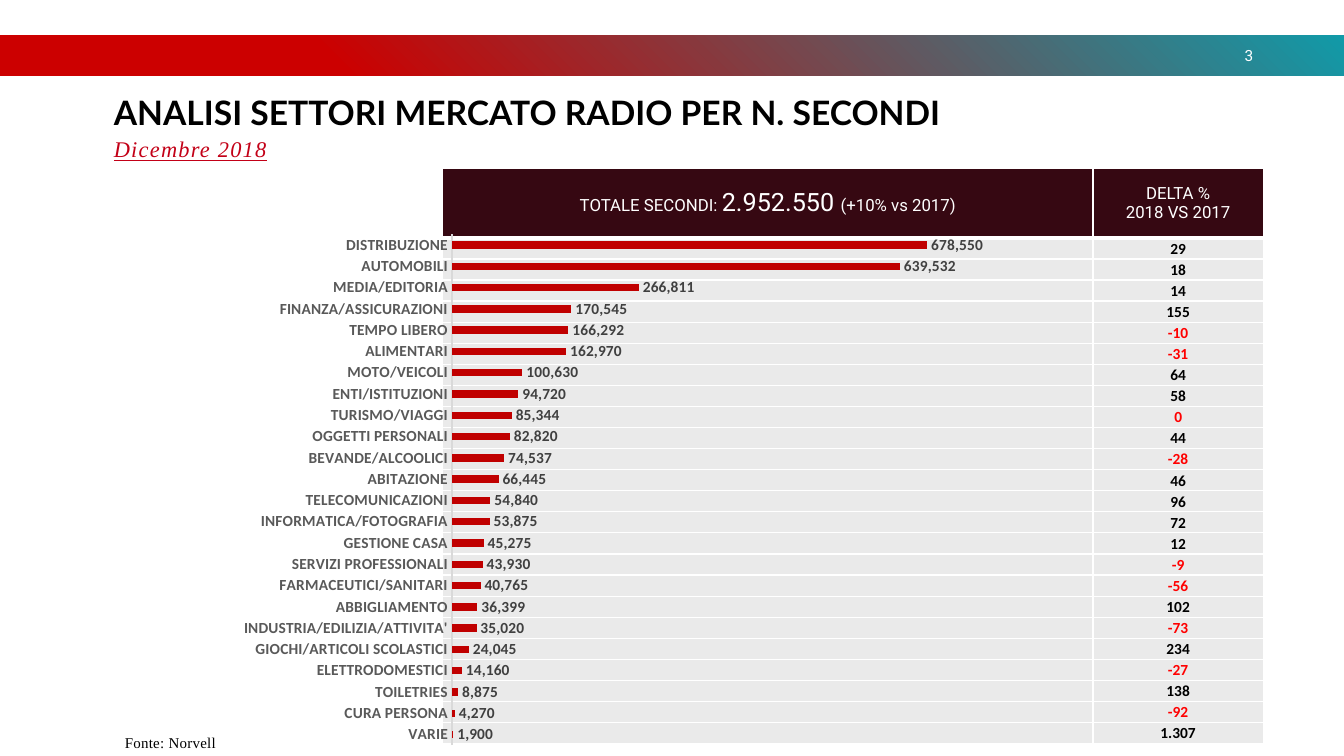
from dataclasses import dataclass

from lxml import etree
from pptx import Presentation
from pptx.chart.data import CategoryChartData
from pptx.dml.color import RGBColor
from pptx.enum.chart import XL_CHART_TYPE, XL_LABEL_POSITION, XL_TICK_MARK
from pptx.enum.shapes import MSO_SHAPE
from pptx.enum.text import MSO_ANCHOR, PP_ALIGN
from pptx.oxml import parse_xml
from pptx.util import Inches, Pt

BAR_CLUSTERED = XL_CHART_TYPE.BAR_CLUSTERED
OUTSIDE_END = XL_LABEL_POSITION.OUTSIDE_END
NO_TICK = XL_TICK_MARK.NONE
RECTANGLE = MSO_SHAPE.RECTANGLE
MIDDLE, BOTTOM = MSO_ANCHOR.MIDDLE, MSO_ANCHOR.BOTTOM
CENTER, RIGHT = PP_ALIGN.CENTER, PP_ALIGN.RIGHT
DRAWING_NS = "http://schemas.openxmlformats.org/drawingml/2006/main"
CHART_NS = "http://schemas.openxmlformats.org/drawingml/2006/chart"


@dataclass(frozen=True)
class Theme:
    white: str = "FFFFFF"
    black: str = "000000"
    band_start: str = "CC0000"
    band_end: str = "119AA8"
    subtitle: str = "C30017"
    header: str = "360812"
    row: str = "EAEAEA"
    negative: str = "FF0000"
    bar: str = "C00000"
    category: str = "595959"
    value: str = "404040"
    axis: str = "D9D9D9"
    heading_font: str = "Lato"
    serif_font: str = "Times New Roman"
    header_font: str = "Roboto"
    data_font: str = "Calibri"
    title_size: float = 24
    total_size: float = 18
    subtitle_size: float = 16
    header_size: float = 12
    data_size: float = 11
    source_size: float = 10.7
    chart_size: float = 10


theme = Theme()

# Sector, seconds, change on the year before, whether the change is shown in red
sectors = [
    ("DISTRIBUZIONE", 678550, "29", False),
    ("AUTOMOBILI", 639532, "18", False),
    ("MEDIA/EDITORIA", 266811, "14", False),
    ("FINANZA/ASSICURAZIONI", 170545, "155", False),
    ("TEMPO LIBERO", 166292, "-10", True),
    ("ALIMENTARI", 162970, "-31", True),
    ("MOTO/VEICOLI", 100630, "64", False),
    ("ENTI/ISTITUZIONI", 94720, "58", False),
    ("TURISMO/VIAGGI", 85344, "0", True),
    ("OGGETTI PERSONALI", 82820, "44", False),
    ("BEVANDE/ALCOOLICI", 74537, "-28", True),
    ("ABITAZIONE", 66445, "46", False),
    ("TELECOMUNICAZIONI", 54840, "96", False),
    ("INFORMATICA/FOTOGRAFIA", 53875, "72", False),
    ("GESTIONE CASA", 45275, "12", False),
    ("SERVIZI PROFESSIONALI", 43930, "-9", True),
    ("FARMACEUTICI/SANITARI", 40765, "-56", True),
    ("ABBIGLIAMENTO", 36399, "102", False),
    ("INDUSTRIA/EDILIZIA/ATTIVITA'", 35020, "-73", True),
    ("GIOCHI/ARTICOLI SCOLASTICI", 24045, "234", False),
    ("ELETTRODOMESTICI", 14160, "-27", True),
    ("TOILETRIES", 8875, "138", False),
    ("CURA PERSONA", 4270, "-92", True),
    ("VARIE", 1900, "1.307", False),
]


def set_font(font, name, size, color, bold=False):
    font.name = name
    font.size = Pt(size)
    font.bold = bold
    font.color.rgb = RGBColor.from_string(color)


def style_cell(cell, fill, margins, bottom_width=1):
    """Give a table cell its white borders, fill, margins and middle anchor."""
    properties = cell._tc.get_or_add_tcPr()
    for side, width in (("L", 1), ("R", 1), ("T", 1), ("B", bottom_width)):
        properties.append(parse_xml(
            f'<a:ln{side} xmlns:a="{DRAWING_NS}" w="{Pt(width)}"><a:solidFill>'
            f'<a:srgbClr val="{theme.white}"/></a:solidFill></a:ln{side}>'))
    cell.fill.solid()
    cell.fill.fore_color.rgb = RGBColor.from_string(fill)
    cell.margin_left, cell.margin_top, cell.margin_right, cell.margin_bottom = map(Inches, margins)
    cell.vertical_anchor = MIDDLE


presentation = Presentation()
presentation.slide_width = Inches(13.33)
presentation.slide_height = Inches(7.5)
slide = presentation.slides.add_slide(presentation.slide_layouts[6])

# Gradient band
band = slide.shapes.add_shape(RECTANGLE, 0, Inches(0.35), Inches(13.33), Inches(0.4))
band.shadow.inherit = False
band.line.fill.background()
band.fill.background()
no_fill = band._element.spPr.find(f"{{{DRAWING_NS}}}noFill")
band._element.spPr.replace(no_fill, parse_xml(
    f'<a:gradFill xmlns:a="{DRAWING_NS}" rotWithShape="1"><a:gsLst>'
    f'<a:gs pos="25000"><a:srgbClr val="{theme.band_start}"/></a:gs>'
    f'<a:gs pos="100000"><a:srgbClr val="{theme.band_end}"/></a:gs></a:gsLst>'
    '<a:path path="circle"><a:fillToRect t="100000" r="100000"/></a:path></a:gradFill>'))

# Source, page number and titles
source_frame = slide.shapes.add_textbox(
    Inches(1.14), Inches(7.22), Inches(1.47), Inches(0.28)).text_frame
source_frame.word_wrap = True
source_frame.vertical_anchor = BOTTOM
source = source_frame.paragraphs[0]
source.space_before = Pt(3)
source_run = source.add_run()
source_run.text = "Fonte: Norvell"
source_run._r.get_or_add_rPr().set("spc", "20")
set_font(source.font, theme.serif_font, theme.source_size, theme.black)

number_frame = slide.shapes.add_textbox(
    Inches(10.2), Inches(0.4), Inches(2.33), Inches(0.3)).text_frame
number_frame.word_wrap = True
number_frame.vertical_anchor = MIDDLE
page_number = number_frame.paragraphs[0]
page_number.text = "3"
page_number.alignment = RIGHT
set_font(page_number.font, theme.header_font, theme.data_size, theme.white)

title_frame = slide.shapes.add_textbox(
    Inches(1.13), Inches(0.96), Inches(9.23), Inches(0.67)).text_frame
title_frame.word_wrap = True
title_frame.margin_left = title_frame.margin_right = 0
title_frame.margin_top = title_frame.margin_bottom = 0
title = title_frame.paragraphs[0]
title.text = "ANALISI SETTORI MERCATO RADIO PER N. SECONDI"
title.line_spacing = 0.9
set_font(title.font, theme.heading_font, theme.title_size, theme.black, True)
subtitle = title_frame.add_paragraph()
subtitle.line_spacing = 0.9
subtitle.space_before = Pt(4)
subtitle_run = subtitle.add_run()
subtitle_run.text = "Dicembre 2018"
subtitle_run._r.get_or_add_rPr().set("spc", "90")
set_font(subtitle.font, theme.serif_font, theme.subtitle_size, theme.subtitle)
subtitle.font.italic = True
subtitle.font.underline = True

# Table behind the bars
table = slide.shapes.add_table(
    len(sectors) + 1, 2, Inches(4.39), Inches(1.67), Inches(8.14), Inches(5.71)).table
table.first_row = False
table.horz_banding = False
table.columns[0].width, table.columns[1].width = Inches(6.45), Inches(1.69)
table.rows[0].height = Inches(0.69)

for column in range(2):
    style_cell(table.cell(0, column), theme.header, (0.13, 0.07, 0.13, 0.07), 3)
total = table.cell(0, 0).text_frame.paragraphs[0]
total.alignment = CENTER
for text, size in (("TOTALE SECONDI: ", theme.header_size), ("2.952.550 ", theme.total_size),
                   ("(+10% vs 2017)", theme.header_size)):
    run = total.add_run()
    run.text = text
    set_font(run.font, theme.header_font, size, theme.white)
table.cell(0, 1).text = "DELTA %\n2018 VS 2017"
for paragraph in table.cell(0, 1).text_frame.paragraphs:
    paragraph.alignment = CENTER
    set_font(paragraph.font, theme.header_font, theme.header_size, theme.white)

for row, (sector, seconds, delta, is_red) in enumerate(sectors, start=1):
    table.rows[row].height = Inches((5.71 - 0.69) / len(sectors))
    for column in range(2):
        style_cell(table.cell(row, column), theme.row, (0.01, 0.01, 0.01, 0))
    blank = table.cell(row, 0).text_frame.paragraphs[0]
    etree.SubElement(blank._p, f"{{{DRAWING_NS}}}endParaRPr", sz="800")
    paragraph = table.cell(row, 1).text_frame.paragraphs[0]
    paragraph.text = delta
    paragraph.alignment = CENTER
    set_font(paragraph.font, theme.data_font, theme.data_size,
             theme.negative if is_red else theme.black, True)

# Bar chart, listed from the bottom up
chart_data = CategoryChartData(number_format="#,##0")
chart_data.categories = [sector[0] for sector in reversed(sectors)]
chart_data.add_series("Series 1", [sector[1] for sector in reversed(sectors)])
chart = slide.shapes.add_chart(
    BAR_CLUSTERED, Inches(2.26), Inches(2.22), Inches(7.94), Inches(5.28), chart_data).chart
chart.has_legend = False
chart.has_title = False
set_font(chart.font, theme.data_font, theme.chart_size, theme.black)
category_axis = chart.category_axis
category_axis.major_tick_mark = NO_TICK
category_axis.format.line.color.rgb = RGBColor.from_string(theme.axis)
category_axis.format.line.width = Pt(0.75)
set_font(category_axis.tick_labels.font, theme.data_font, theme.data_size, theme.category, True)
chart.value_axis.visible = False
chart.value_axis.has_major_gridlines = False
chart.value_axis.minimum_scale = 0
chart.value_axis.maximum_scale = 800000
plot = chart.plots[0]
plot.gap_width = 182
plot.vary_by_categories = False
bars = plot.series[0]
bars.format.fill.solid()
bars.format.fill.fore_color.rgb = RGBColor.from_string(theme.bar)
labels = bars.data_labels
labels.show_value = True
labels.position = OUTSIDE_END
labels.number_format = "#,##0"
labels.number_format_is_linked = False
set_font(labels.font, theme.data_font, theme.data_size, theme.value, True)
plot_area = chart._chartSpace.chart.plotArea
for layout in plot_area.findall(f"{{{CHART_NS}}}layout"):
    plot_area.remove(layout)
plot_area.insert(0, parse_xml(
    f'<c:layout xmlns:c="{CHART_NS}"><c:manualLayout><c:layoutTarget val="inner"/>'
    '<c:xMode val="edge"/><c:yMode val="edge"/><c:x val="0.28"/><c:y val="0.02"/>'
    '<c:w val="0.7"/><c:h val="0.96"/></c:manualLayout></c:layout>'))

presentation.save("out.pptx")
